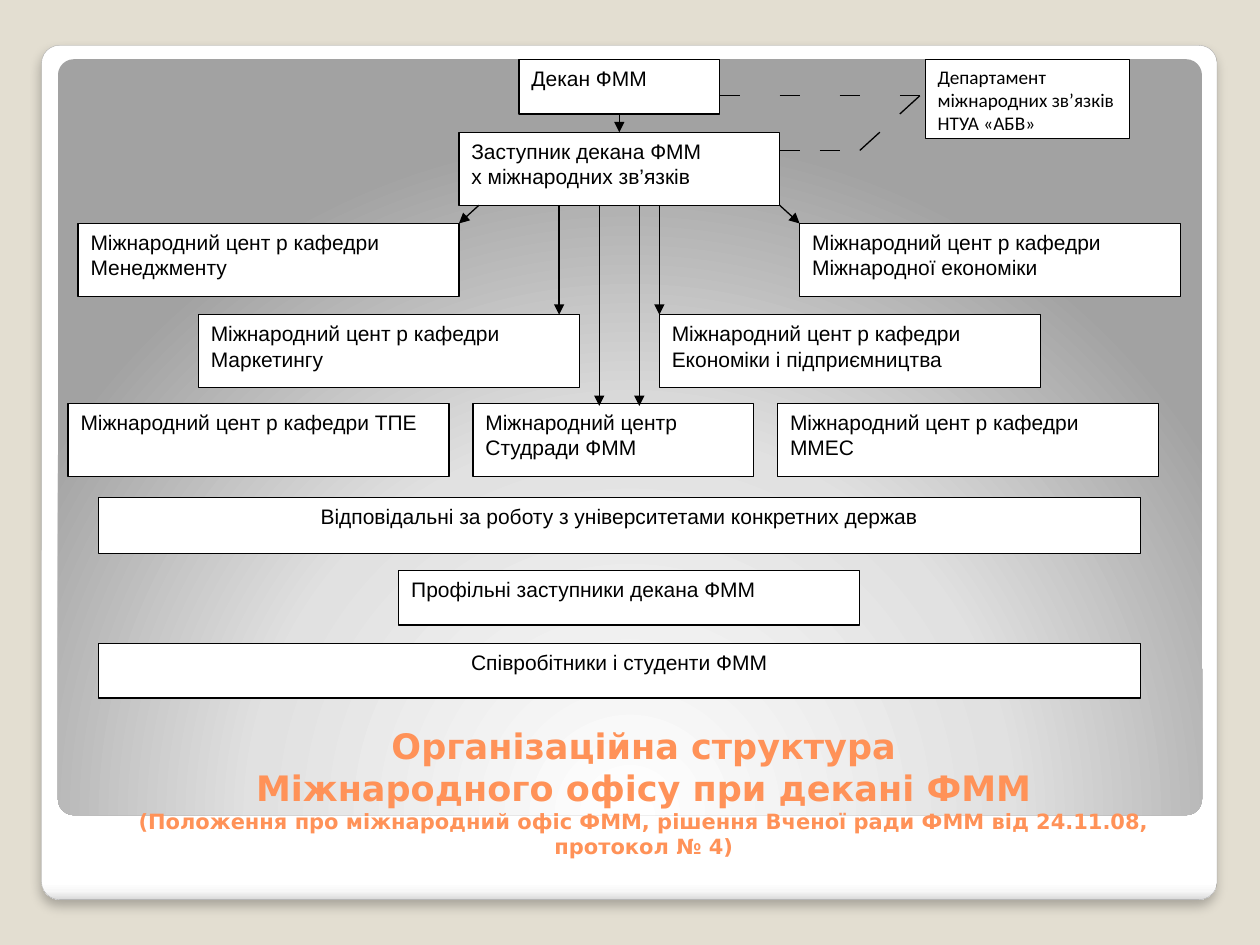
from dataclasses import dataclass

from pptx import Presentation, util as u
from pptx.dml.color import RGBColor
from pptx.enum import shapes, text
from pptx.oxml import parse_xml
from pptx.oxml.ns import nsdecls


@dataclass(frozen=True)
class Theme:
    back: str = "E3DED1"
    paper: str = "FFFFFF"
    ink: str = "000000"
    edge: str = "A4A4A4"
    accent: str = "FF9258"
    font: str = "Arial"
    small: str = "Calibri"
    head: str = "DejaVu Sans"
    body: int = 12
    note: int = 11
    big: int = 20


T = Theme()


class Grid:
    """Columns and rows laid over a box given in inches."""

    def __init__(self, left, top, wide, high, cols, rows):
        self.left, self.top = left, top
        self.dx, self.dy = wide / cols, high / rows

    def at(self, col, row):
        return u.Inches(self.left + col * self.dx), u.Inches(self.top + row * self.dy)

    def size(self, cols, rows):
        return u.Inches(cols * self.dx), u.Inches(rows * self.dy)


def rgb(code):
    return RGBColor.from_string(code)


def style(font, **looks):
    looks = {"size": u.Pt(T.body), "name": T.font, "bold": False, **looks}
    font.color.rgb = rgb(looks.pop("color", T.ink))
    for key, val in looks.items():
        setattr(font, key, val)


# Frame: two rounded panels with gradients
def panel(slide, box, stops, kind):
    shape = slide.shapes.add_shape(
        shapes.MSO_SHAPE.ROUNDED_RECTANGLE, *map(u.Inches, box))
    shape.adjustments[0] = 0.021
    shape.shadow.inherit = False
    shape.line.fill.background()
    shape.fill.gradient()
    marks = "".join(f'<a:gs pos="{pos * 1000}"><a:srgbClr val="{code}"/></a:gs>'
                    for pos, code in stops)
    props = shape.element.spPr
    old = props.find("{*}gradFill")
    props.replace(old, parse_xml(
        f'<a:gradFill {nsdecls("a")} rotWithShape="1">'
        f"<a:gsLst>{marks}</a:gsLst>{kind}</a:gradFill>"))
    return shape


def frame(slide):
    card = panel(slide, (0.33, 0.36, 9.33, 6.78),
                 [(0, T.paper), (98, T.paper), (99, "F7F7F7"), (100, "DADADA")],
                 '<a:lin ang="5400000" scaled="0"/>')
    card.line.color.rgb = rgb(T.edge)
    card.line.width = u.Pt(0.16)
    card.element.spPr.find("{*}effectLst").append(parse_xml(
        f'<a:outerShdw {nsdecls("a")} blurRad="{u.Pt(6)}" dist="{u.Pt(4)}" '
        'dir="5400000" rotWithShape="0"><a:srgbClr val="000000">'
        '<a:alpha val="25000"/></a:srgbClr></a:outerShdw>'))
    panel(slide, (0.46, 0.47, 9.08, 6),
          [(0, T.paper), (55, "E1E1E1"), (100, "A2A2A2")],
          '<a:path path="circle"><a:fillToRect l="50000" t="175000" '
          'r="50000" b="-75000"/></a:path>')


# Parts of the chart
def node(slide, grid, cell, lines, align=text.PP_ALIGN.LEFT, after=0, **looks):
    shape = slide.shapes.add_shape(
        shapes.MSO_SHAPE.RECTANGLE, *grid.at(*cell[:2]), *grid.size(*cell[2:]))
    shape.shadow.inherit = False
    shape.fill.solid()
    shape.fill.fore_color.rgb = rgb(T.paper)
    shape.line.color.rgb = rgb(T.ink)
    shape.line.width = u.Pt(0.75)
    frame = shape.text_frame
    frame.word_wrap = True
    frame.vertical_anchor = text.MSO_ANCHOR.TOP
    frame.text = lines
    for para in frame.paragraphs:
        para.alignment = align
        para.space_after = u.Pt(after)
        style(para.runs[0].font, **looks)


def link(slide, grid, ends, arrow=False):
    line = slide.shapes.add_connector(
        shapes.MSO_CONNECTOR.STRAIGHT, *grid.at(*ends[:2]), *grid.at(*ends[2:]))
    line.line.color.rgb = rgb(T.ink)
    line.line.width = u.Pt(0.75)
    if arrow:
        line.line._get_or_add_ln().append(
            parse_xml(f'<a:tailEnd {nsdecls("a")} type="triangle"/>'))
    line.element.spPr.append(parse_xml(f'<a:effectLst {nsdecls("a")}/>'))


def chart(slide, box):
    grid = Grid(*box, cols=54, rows=35)
    unit = "Міжнародний цент р кафедри"
    mid = text.PP_ALIGN.CENTER

    # Leaders, centres and wide bars: column, row, columns wide, rows high
    nodes = [
        ((22, 0, 10, 3), "Декан ФММ"),
        ((19, 4, 16, 4), "Заступник декана ФММ\nх міжнародних зв’язків"),
        ((0, 9, 19, 4), f"{unit} Менеджменту"),
        ((36, 9, 19, 4), f"{unit}\nМіжнародної економіки"),
        ((6, 14, 19, 4), f"{unit} Маркетингу"),
        ((29, 14, 19, 4), f"{unit} Економіки і підприємництва"),
        ((-0.5, 18.85, 19, 4), f"{unit} ТПЕ"),
        ((19.7, 18.85, 14, 4), "Міжнародний центр\nСтудради ФММ"),
        ((34.9, 18.85, 19, 4), f"{unit} ММЕС"),
        ((16, 28, 23, 3), "Профільні заступники декана ФММ"),
    ]
    for cell, lines in nodes:
        node(slide, grid, cell, lines)
    node(slide, grid, (1, 24, 52, 3.1),
         "Відповідальні за роботу з університетами конкретних держав", mid)
    node(slide, grid, (1, 32, 52, 3), "Співробітники і студенти ФММ", mid)
    node(slide, grid, (42.26, 0, 10.2, 4.35),
         "Департамент міжнародних зв’язків НТУА «АБВ»", after=10,
         name=T.small, size=u.Pt(T.note))

    # Arrows down from the leaders
    drops = [(27, 3, 27, 4), (20, 8, 19, 9), (35, 8, 36, 9)]
    drops += [(col, 8, col, row) for col, row in ((24, 14), (26, 19), (28, 19), (29, 14))]
    for ends in drops:
        link(slide, grid, ends, arrow=True)

    # Loose dashes to the department
    dashes = [(col, 2, col + 1, 2) for col in range(32, 42, 3)]
    dashes += [(col, 5, col + 1, 5) for col in (35, 37)]
    dashes += [(39, 5, 40, 4), (41, 3, 42, 2)]
    for ends in dashes:
        link(slide, grid, ends)


# Title at the foot, on top of the panels
def title(slide, box):
    shape = slide.shapes.title
    shape.left, shape.top, shape.width, shape.height = map(u.Inches, box)
    frame = shape.text_frame
    for key, val in {"word_wrap": True, "vertical_anchor": text.MSO_ANCHOR.TOP,
                     "auto_size": text.MSO_AUTO_SIZE.NONE}.items():
        setattr(frame, key, val)
    rows = [
        ("Організаційна структура", T.big),
        ("Міжнародного офісу при декані ФММ", T.big),
        ("(Положення про міжнародний офіс ФММ, рішення Вченої ради ФММ "
         "від 24.11.08, протокол № 4)", T.body),
    ]
    frame.text = "\n".join(row for row, _ in rows)
    for para, (_, size) in zip(frame.paragraphs, rows):
        para.alignment = text.PP_ALIGN.CENTER
        style(para.runs[0].font, name=T.head, size=u.Pt(size),
              bold=True, color=T.accent)
    shape.element.getparent().append(shape.element)


def main():
    deck = Presentation()
    deck.slide_width, deck.slide_height = u.Inches(10), u.Inches(7.5)
    slide = deck.slides.add_slide(deck.slide_layouts[5])
    slide.background.fill.solid()
    slide.background.fill.fore_color.rgb = rgb(T.back)
    frame(slide)
    chart(slide, (0.62, 0.47, 8.59, 5.07))
    title(slide, (0.62, 5.7, 8.98, 1.48))
    deck.save("out.pptx")


if __name__ == "__main__":
    main()
